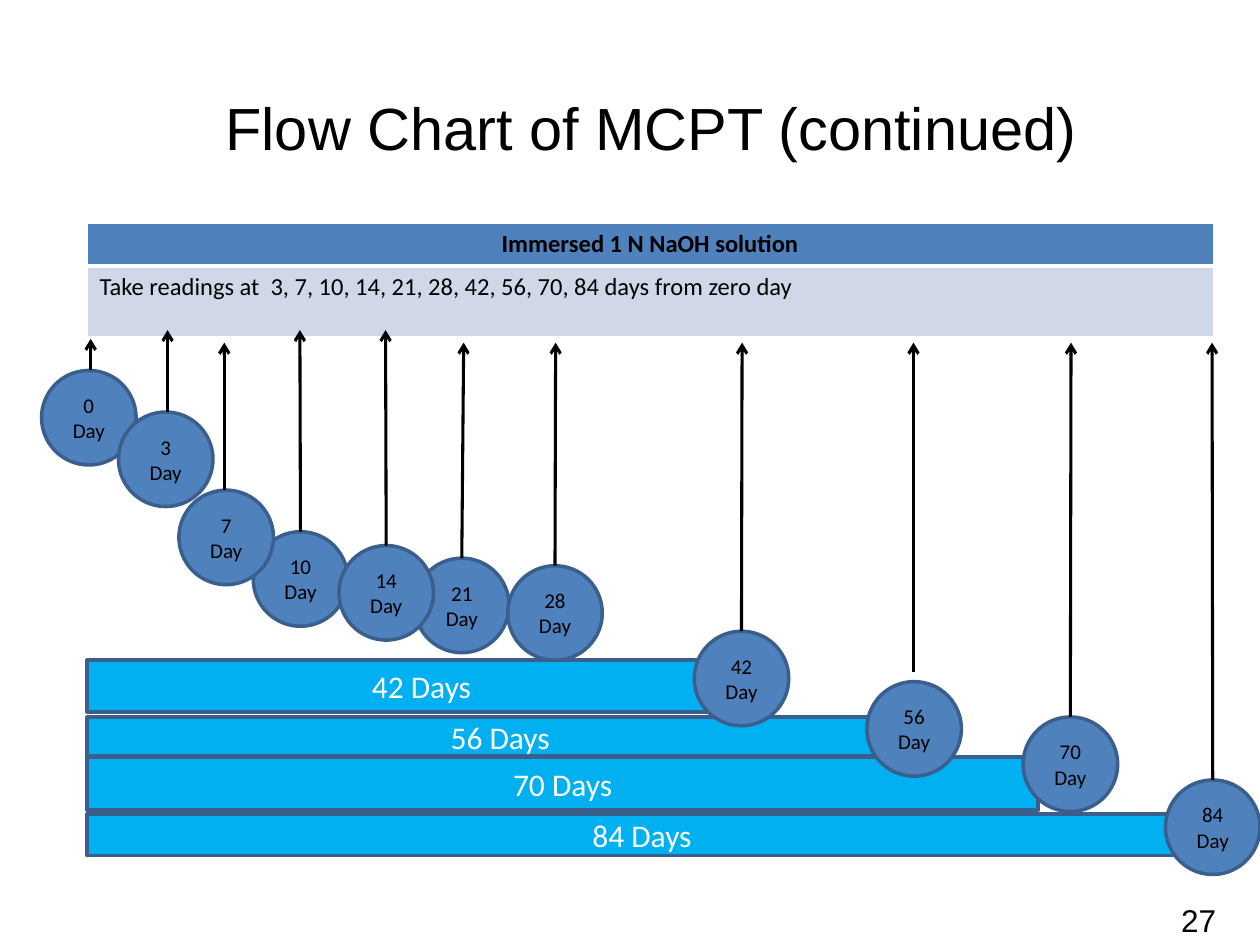
from lxml.etree import SubElement
from pptx import Presentation
from pptx.dml.color import RGBColor
from pptx.enum.shapes import MSO_CONNECTOR, MSO_SHAPE
from pptx.enum.text import MSO_ANCHOR, PP_ALIGN
from pptx.oxml.ns import qn
from pptx.util import Pt

PX = 9144  # 100 px to the inch
BLACK = RGBColor(0x00, 0x00, 0x00)
WHITE = RGBColor(0xFF, 0xFF, 0xFF)
BLUE = RGBColor(0x4F, 0x81, 0xBD)
NAVY = RGBColor(0x3A, 0x5F, 0x8C)
CYAN = RGBColor(0x00, 0xB0, 0xF0)
PALE = RGBColor(0xD0, 0xD8, 0xE8)


def write(frame, text, size, color=BLACK, align=PP_ALIGN.CENTER, face="Calibri", bold=False):
    frame.text = text
    frame.word_wrap = True
    para = frame.paragraphs[0]
    para.alignment = align
    font = para.runs[0].font
    font.name, font.size, font.bold = face, Pt(size), bold
    font.color.rgb = color


def block(kind, box, fill, text, size, color):
    shape = slide.shapes.add_shape(kind, *[n * PX for n in box])
    shape.shadow.inherit = False
    shape.fill.solid()
    shape.fill.fore_color.rgb = fill
    shape.line.color.rgb = NAVY
    shape.line.width = Pt(2)
    shape.text_frame.vertical_anchor = MSO_ANCHOR.MIDDLE
    write(shape.text_frame, text, size, color)
    return shape


deck = Presentation()
deck.slide_width, deck.slide_height = 1000 * PX, 750 * PX
slide = deck.slides.add_slide(deck.slide_layouts[5])

# Title
title = slide.shapes.title
title.left, title.top, title.width, title.height = [n * PX for n in (169, 67, 740, 67)]
title.text_frame.vertical_anchor = MSO_ANCHOR.MIDDLE
write(title.text_frame, "Flow Chart of MCPT (continued)", 34, align=PP_ALIGN.LEFT, face="Arial")

# Duration bars: days, top, width, height
LEFT = 69
bars = [(42, 524, 531, 41), (56, 569, 656, 31), (70, 601, 755, 42), (84, 646, 881, 33)]
for days, top, width, height in bars:
    block(MSO_SHAPE.RECTANGLE, (LEFT, top, width, height), CYAN, f"{days} Days", 18, WHITE)

# Table of readings: text, row height, fill, alignment, bold, top and bottom border
rows = [
    ("Immersed 1 N NaOH solution", 34, BLUE, PP_ALIGN.CENTER, True, 1, 3),
    ("Take readings at  3, 7, 10, 14, 21, 28, 42, 56, 70, 84 days from zero day",
     56, PALE, PP_ALIGN.LEFT, False, 3, 1),
]
table = slide.shapes.add_table(len(rows), 1, LEFT * PX, 177 * PX, 894 * PX, 90 * PX).table
for i, (text, height, fill, align, bold, upper, lower) in enumerate(rows):
    table.rows[i].height = height * PX
    cell = table.cell(i, 0)
    write(cell.text_frame, text, 14, align=align, bold=bold)
    props = cell._tc.get_or_add_tcPr()
    for side, width in (("L", 1), ("R", 1), ("T", upper), ("B", lower)):
        edge = SubElement(props, qn(f"a:ln{side}"), w=str(Pt(width)))
        SubElement(SubElement(edge, qn("a:solidFill")), qn("a:srgbClr"), val=str(WHITE))
    cell.fill.solid()
    cell.fill.fore_color.rgb = fill

# Reading days, back to front: day, left, top, arrow tip x and y, arrow start y
# (None joins the arrow to the top of the circle)
SIZE = 75
marks = [
    (84, 925, 619, 962, 272, None),
    (0, 33, 294, 72, 269, 294),
    (56, 688, 541, 725, 272, 533),
    (21, 329, 443, 368, 272, None),
    (42, 551, 501, 589, 272, None),
    (70, 812, 569, 850, 272, None),
    (10, 201, 422, 238, 262, None),
    (28, 403, 449, 441, 272, None),
    (14, 269, 433, 306, 262, None),
    (3, 94, 327, 133, 262, 327),
    (7, 142, 389, 178, 272, 389),
]
for day, left, top, x, tip, start in marks:
    disc = block(MSO_SHAPE.OVAL, (left, top, SIZE, SIZE), BLUE, f"{day} Day", 12, BLACK)
    arrow = slide.shapes.add_connector(
        MSO_CONNECTOR.STRAIGHT, x * PX, (start or top) * PX, x * PX, tip * PX)
    if start is None:
        arrow.begin_connect(disc, 0)
    arrow.line.color.rgb = BLACK
    arrow.line.width = Pt(1.75)
    SubElement(arrow.line._get_or_add_ln(), qn("a:tailEnd"), type="arrow")
    SubElement(arrow._element.spPr, qn("a:effectLst"))

# Page number
page = slide.shapes.add_textbox(*[n * PX for n in (775, 710, 200, 40)])
write(page.text_frame, "27", 18, align=PP_ALIGN.RIGHT, face="Arial")

deck.save("out.pptx")
